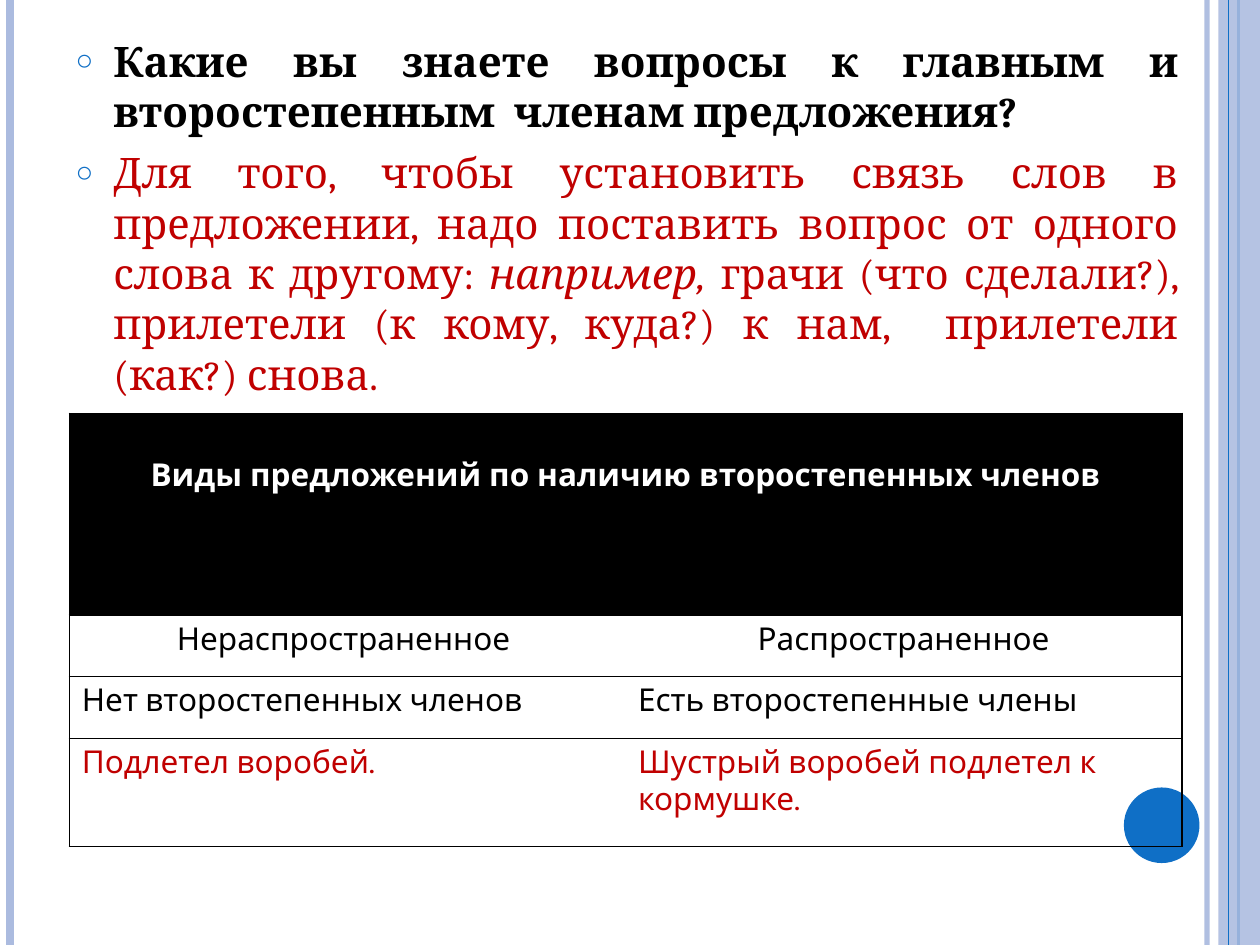
from lxml import etree
from pptx import Presentation
from pptx.dml.color import RGBColor
from pptx.enum import shapes, text
from pptx.oxml import parse_xml
from pptx.oxml.ns import nsdecls, qn
from pptx.util import Inches, Pt

BLUE, PALE, RED, BLACK, WHITE = "0F6FC6", "ABBBDF", "C00000", "000000", "FFFFFF"


def paint(fill, color, alpha=100):
    """Fill with a solid colour, alpha in percent."""
    fill.solid()
    fill.fore_color.rgb = RGBColor.from_string(color)
    if alpha < 100:
        node = fill._xPr.find(qn("a:solidFill"))[0]
        etree.SubElement(node, qn("a:alpha"), val=str(alpha * 1000))


def style(run, font, size, color, bold=False, italic=False):
    run.font.name, run.font.size = font, Pt(size)
    run.font.bold, run.font.italic = bold, italic
    paint(run.font.fill, color)


prs = Presentation()
prs.slide_width, prs.slide_height = Inches(10), Inches(7.5)
slide = prs.slides.add_slide(prs.slide_layouts[1])
title = slide.shapes.title
title._element.getparent().remove(title._element)
body = slide.placeholders[1]

# Side stripes: x, colour, width, alpha; the band sits behind the last one
stripes = [(9.58, PALE, 3, 93), (0.08, PALE, 4.5, 100),
           (9.83, BLUE, 1.5, 100), (9.75, BLUE, 0.75, 100)]
decor = []
for x, color, width, alpha in stripes:
    if x == 9.75:
        band = slide.shapes.add_shape(shapes.MSO_SHAPE.RECTANGLE,
                                      Inches(9.67), 0, Inches(0.33), Inches(7.5))
        paint(band.fill, PALE, 87)
        decor.append(band)
    line = slide.shapes.add_connector(shapes.MSO_CONNECTOR.STRAIGHT,
                                      Inches(x), 0, Inches(x), Inches(7.5))
    line.line.width = Pt(width)
    paint(line.line.fill, color, alpha)
    etree.SubElement(line._element.spPr, qn("a:effectLst"))

dot = slide.shapes.add_shape(shapes.MSO_SHAPE.OVAL, Inches(8.92), Inches(6.25),
                             Inches(0.6), Inches(0.6))
paint(dot.fill, BLUE)
decor.append(dot)
for shape in decor:
    shape.line.fill.background()
    shape.shadow.inherit = False

# Question and rule; the body goes in front of the decoration
slide.shapes._spTree.append(body._element)
body.left, body.top = Inches(0.5), Inches(0.23)
body.width, body.height = Inches(8.95), Inches(6.85)
frame = body.text_frame
frame.word_wrap = True
frame.auto_size = text.MSO_AUTO_SIZE.NONE
frame.vertical_anchor = text.MSO_ANCHOR.TOP
points = [
    [("Какие вы знаете вопросы к главным и второстепенным  членам предложения?",
      BLACK, True, False)],
    [("Для того, чтобы установить связь слов в предложении, надо поставить "
      "вопрос от одного слова к другому: ", RED, False, False),
     ("например, ", RED, False, True),
     ("грачи (что сделали?), прилетели (к кому, куда?) к нам,  прилетели "
      "(как?) снова.", RED, False, False)],
]
for i, parts in enumerate(points):
    para = frame.paragraphs[0] if i == 0 else frame.add_paragraph()
    para.alignment = text.PP_ALIGN.JUSTIFY
    para.space_before = Pt(6)
    props = para._p.get_or_add_pPr()
    props.set("marL", str(Inches(0.3)))
    props.set("indent", str(Inches(-0.3)))
    color = etree.SubElement(props, qn("a:buClr"))
    etree.SubElement(color, qn("a:srgbClr"), val=BLUE)
    etree.SubElement(props, qn("a:buSzPct"), val="70000")
    etree.SubElement(props, qn("a:buChar"), char="○")
    for words, color, bold, italic in parts:
        run = para.add_run()
        run.text = words
        style(run, "Cambria", 24, color, bold, italic)

# Kinds of sentences
rows = [
    ("Виды предложений по наличию второстепенных членов", ""),
    ("Нераспространенное ", "Распространенное"),
    ("Нет второстепенных членов", "Есть второстепенные члены"),
    ("Подлетел воробей.", "Шустрый воробей подлетел к кормушке."),
]
colors = [WHITE, BLACK, BLACK, RED]
heights = [1.6, 0.49, 0.49, 0.86]
table = slide.shapes.add_table(4, 2, Inches(0.55), Inches(3.28),
                               Inches(8.83), Inches(3.44)).table
table.first_row = table.horz_banding = False
table.cell(0, 0).merge(table.cell(0, 1))
for r, row in enumerate(rows):
    table.rows[r].height = Inches(heights[r])
    for c, words in enumerate(row):
        cell = table.cell(r, c)
        props = cell._tc.get_or_add_tcPr()
        for side in "LRTB":
            inner = r > 0 and side == "RL"[c]
            fill = ("<a:noFill/>" if inner else
                    f'<a:solidFill><a:srgbClr val="{BLACK}"/></a:solidFill>')
            props.append(parse_xml(
                f'<a:ln{side} w="12700" {nsdecls("a")}>{fill}</a:ln{side}>'))
        if r == 0:
            paint(cell.fill, BLACK)
            cell.margin_top = Inches(0.35)
        else:
            cell.fill.background()
        if not words:
            continue
        cell.text_frame.text = words
        para = cell.text_frame.paragraphs[0]
        para.alignment = text.PP_ALIGN.CENTER if r < 2 else text.PP_ALIGN.LEFT
        style(para.runs[0], "Karla", 18, colors[r], bold=r == 0)

prs.save("out.pptx")
